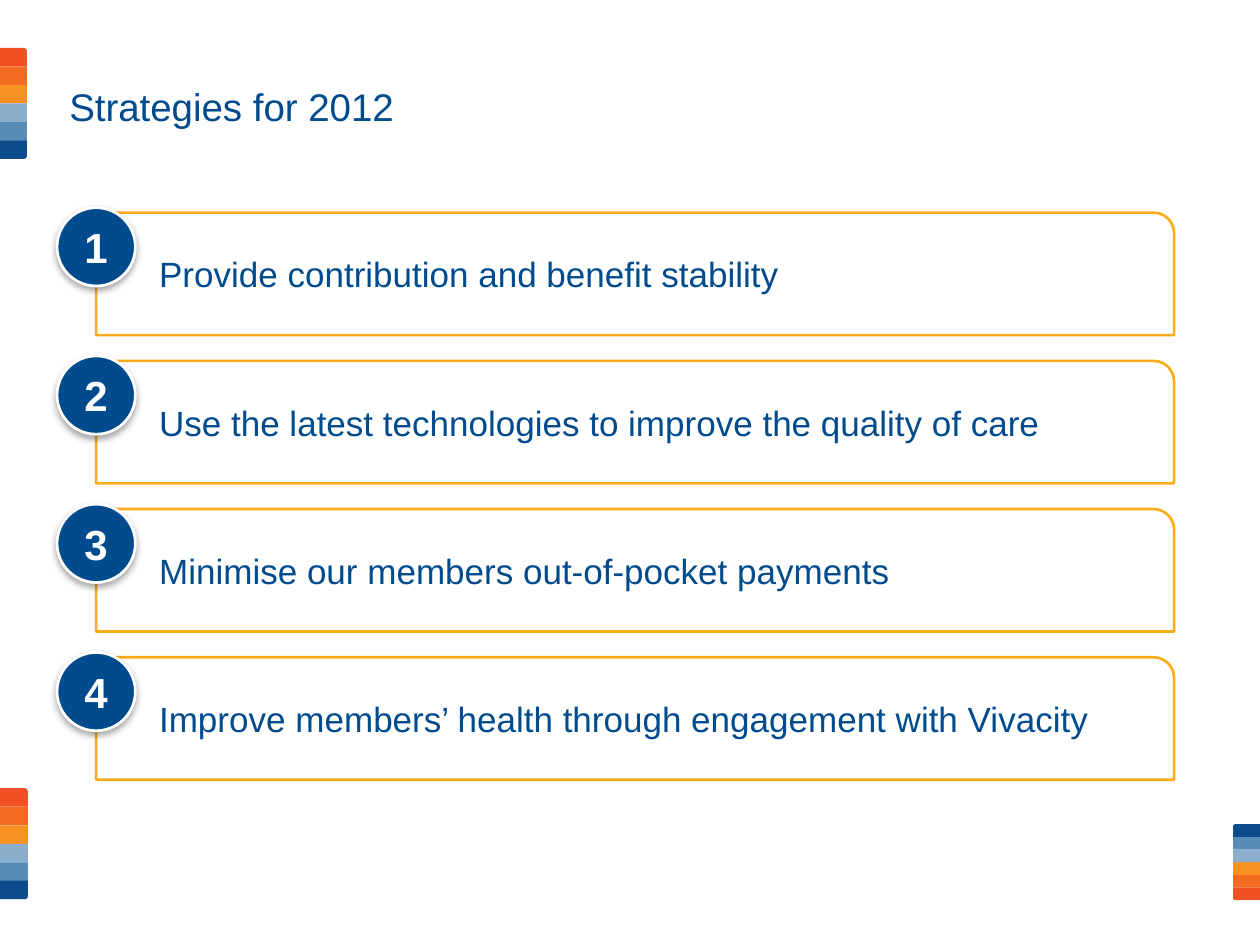
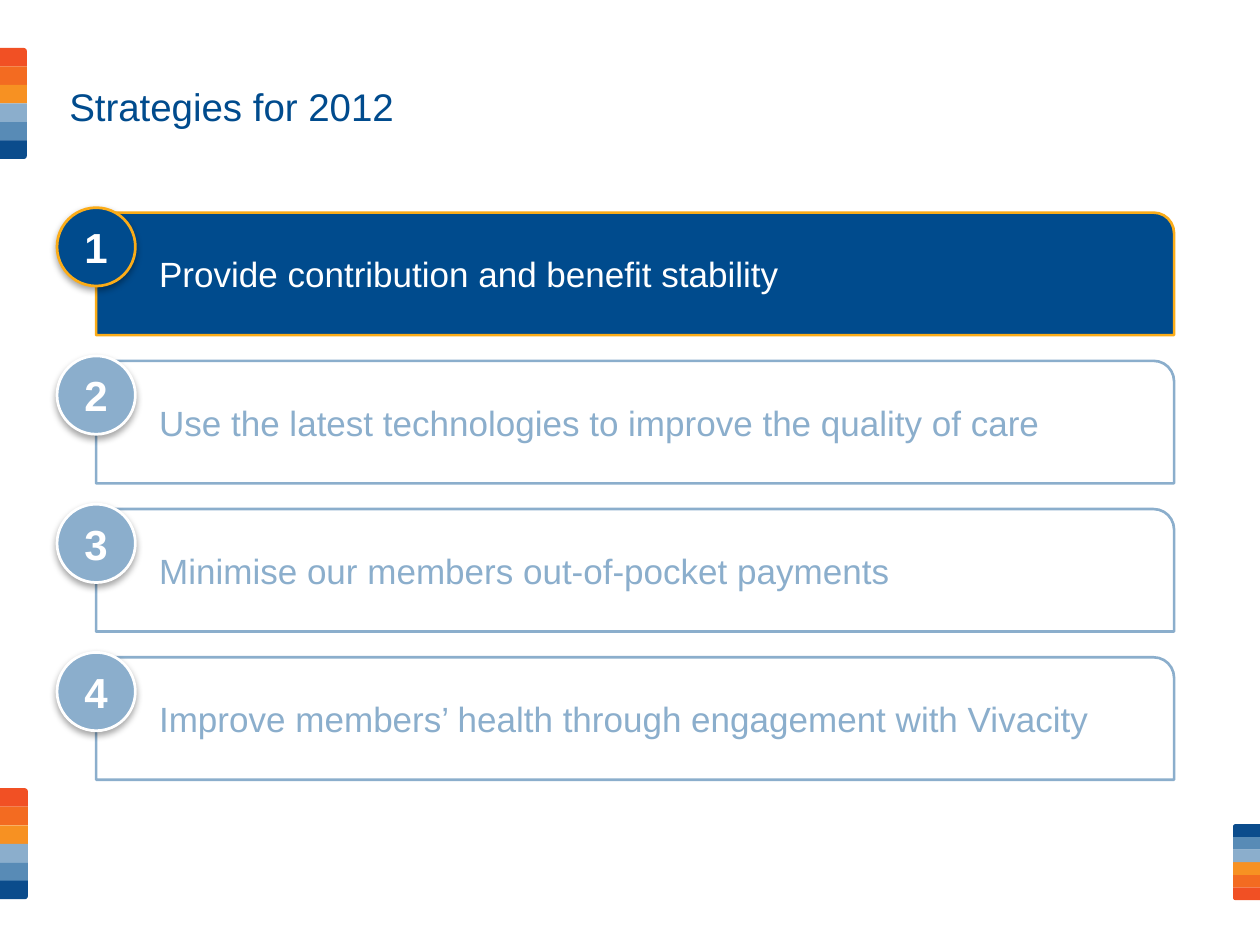
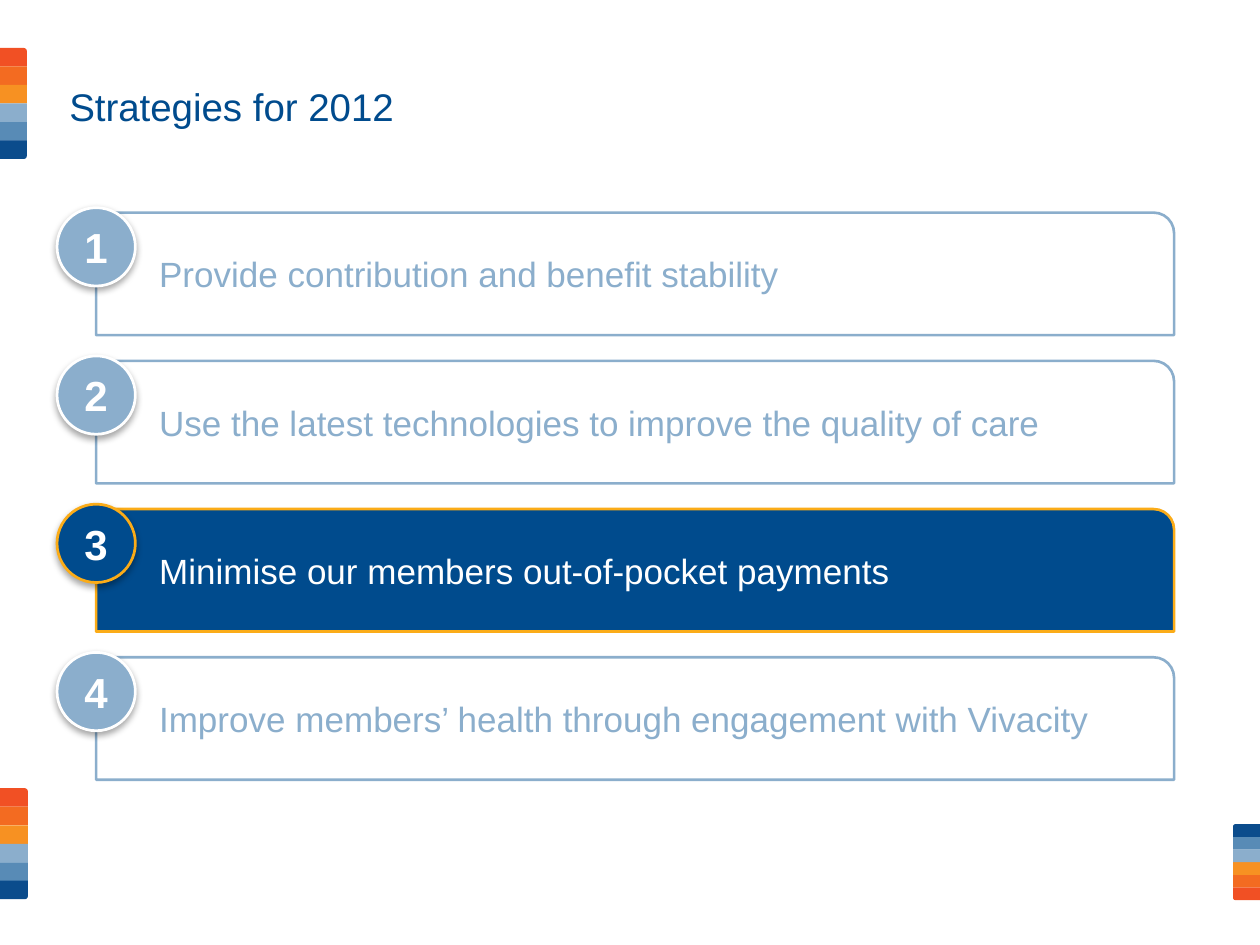
from lxml import etree
from pptx import Presentation
from pptx.dml.color import RGBColor
from pptx.enum import shapes, text
from pptx.oxml.ns import qn
from pptx.util import Pt

# Colours
NAVY = RGBColor(0x00, 0x4B, 0x8D)
GOLD = RGBColor(0xFB, 0xAC, 0x18)
PALE = RGBColor(0x8B, 0xAE, 0xCC)
WHITE = RGBColor(0xFF, 0xFF, 0xFF)
BANDS = [RGBColor(0xF1, 0x50, 0x24), RGBColor(0xF3, 0x6B, 0x21),
         RGBColor(0xF7, 0x91, 0x22), PALE,
         RGBColor(0x58, 0x8B, 0xB6), RGBColor(0x0B, 0x4C, 0x8C)]

FONT = "Arial"
CORNER = shapes.MSO_SHAPE.ROUND_1_RECTANGLE
DISC = shapes.MSO_SHAPE.OVAL

# Wording
TITLE = "Strategies for 2012"
GOALS = ["Provide contribution and benefit stability",
         "Use the latest technologies to improve the quality of care",
         "Minimise our members out-of-pocket payments",
         "Improve members’ health through engagement with Vivacity"]

# Looks of a goal: bar fill, bar line, bar text, disc fill, disc line
PLAIN = (WHITE, GOLD, NAVY, NAVY, WHITE)
FOCUS = (NAVY, GOLD, WHITE, NAVY, GOLD)
FADED = (WHITE, PALE, PALE, PALE, WHITE)

# Goal rows
TOP, STEP = 121.5, 84.7


class Deck:
    def __init__(self):
        self.prs = Presentation()
        self.prs.slide_width = Pt(720)
        self.prs.slide_height = Pt(540)
        self.slide = None

    def start(self):
        """Add a slide with the shared strips and title."""
        self.slide = self.prs.slides.add_slide(self.prs.slide_layouts[6])
        self.strip(-0.6, 27.4, 16, 10.58)
        self.strip(704.6, 470.9, 15.4, 7.24, turn=True)
        self.strip(0, 450.4, 16, 10.58)
        box = self.slide.shapes.add_textbox(Pt(25.2), Pt(27.4), Pt(528), Pt(66.2))
        self.label(box, TITLE, 22, NAVY, left=14.4)

    def shape(self, kind, x, y, w, h, fill, line=None, width=1.5):
        item = self.slide.shapes.add_shape(kind, Pt(x), Pt(y), Pt(w), Pt(h))
        item.shadow.inherit = False
        item.fill.solid()
        item.fill.fore_color.rgb = fill
        if line is None:
            item.line.fill.background()
        else:
            item.line.color.rgb = line
            item.line.width = Pt(width)
        return item

    def label(self, item, words, size, color, left, right=7.2, bold=False,
              align=text.PP_ALIGN.LEFT):
        frame = item.text_frame
        frame.word_wrap = True
        frame.vertical_anchor = text.MSO_ANCHOR.MIDDLE
        frame.margin_left, frame.margin_right = Pt(left), Pt(right)
        frame.margin_top = frame.margin_bottom = Pt(3.6)
        para = frame.paragraphs[0]
        para.alignment = align
        run = para.add_run()
        run.text = words
        run.font.name = FONT
        run.font.size = Pt(size)
        run.font.bold = bold
        run.font.color.rgb = color

    def strip(self, x, y, w, step, turn=False):
        """Stack the colour bands; a turned strip runs upwards."""
        last = len(BANDS) - 1
        for i, color in enumerate(BANDS):
            row = last - i if turn else i
            band = self.shape(CORNER, x, y + row * step, w, step, color)
            if turn:
                band.rotation = 180
            if i == last:
                band._element.spPr.get_or_add_xfrm().set("flipV", "1")
            elif i:
                band.adjustments[0] = 0

    def shade(self, item):
        """Give a shape a soft shadow below it."""
        effects = item._element.spPr.find(qn("a:effectLst"))
        outer = etree.SubElement(effects, qn("a:outerShdw"), blurRad=str(Pt(4)),
                                 dist=str(Pt(2)), dir="5400000", rotWithShape="0")
        black = etree.SubElement(outer, qn("a:srgbClr"), val="000000")
        etree.SubElement(black, qn("a:alpha"), val="35000")

    def goal(self, row, words, look):
        fill, line, ink, dot, ring = look
        y = TOP + row * STEP
        bar = self.shape(CORNER, 54.9, y, 616, 70, fill, line)
        self.label(bar, words, 20, ink, left=36)
        disc = self.shape(DISC, 32.6, y - 2.8, 44.8, 44.8, dot, ring, 1.57)
        self.shade(disc)
        self.label(disc, str(row + 1), 24, WHITE, left=0, right=0, bold=True,
                   align=text.PP_ALIGN.CENTER)


def main():
    deck = Deck()
    # Overview first, then one slide per highlighted goal
    for focus in (None, 0, 2):
        deck.start()
        for row, words in enumerate(GOALS):
            if focus is None:
                look = PLAIN
            else:
                look = FOCUS if row == focus else FADED
            deck.goal(row, words, look)
    deck.prs.save("out.pptx")


if __name__ == "__main__":
    main()
